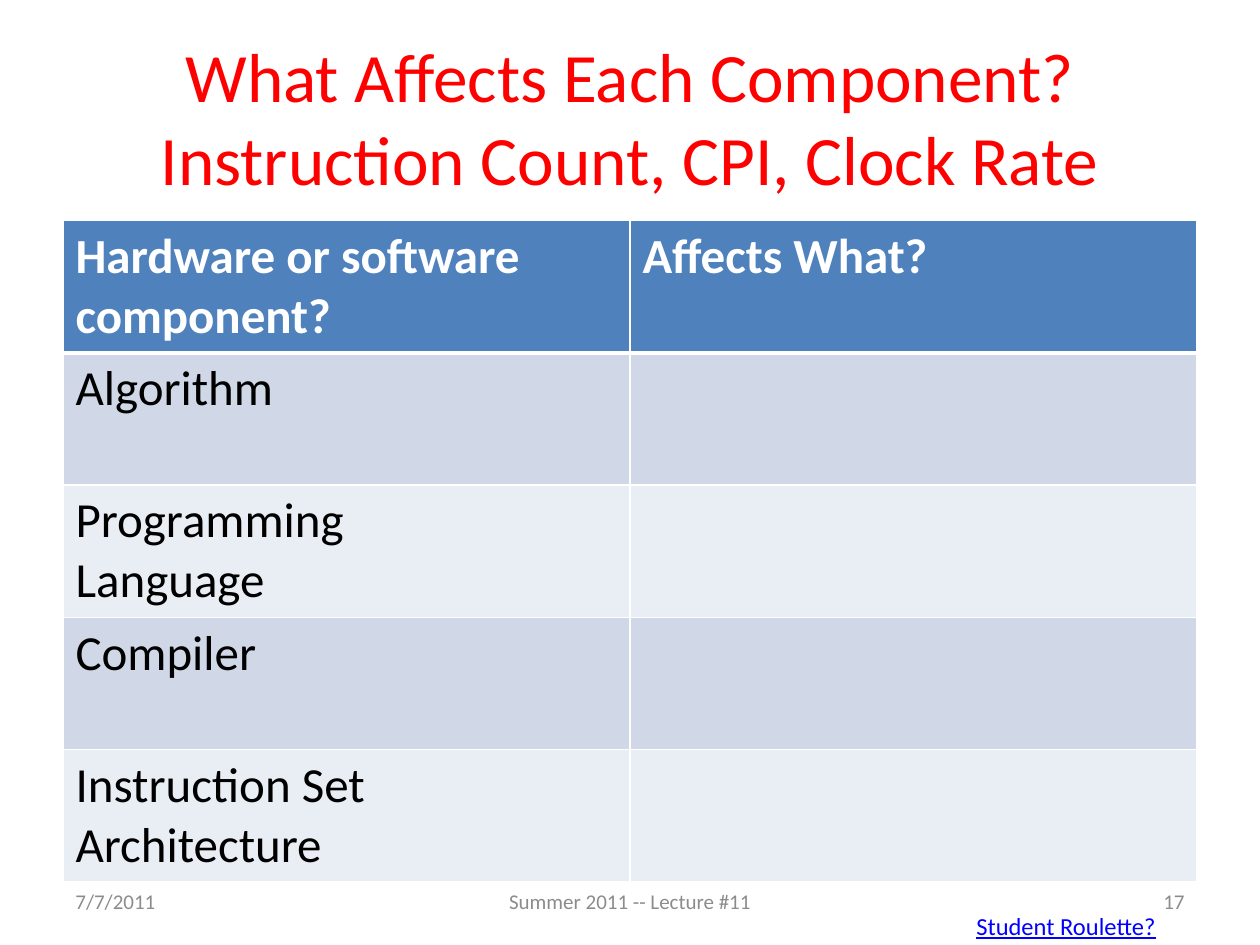
from dataclasses import dataclass

from lxml import etree
from pptx import Presentation
from pptx import util as u
from pptx.dml.color import RGBColor
from pptx.enum import text as t
from pptx.oxml import ns


@dataclass(frozen=True)
class Theme:
    font: str = "Calibri"
    title: str = "FF0000"
    header: str = "4F81BD"
    bands: tuple = ("D0D8E8", "E9EDF4")
    light: str = "FFFFFF"
    dark: str = "000000"
    footer: str = "8C8C8C"
    link: str = "0000FF"
    title_size: float = 39.6
    table_size: float = 28
    footer_size: float = 12
    link_size: float = 14


@dataclass(frozen=True)
class Label:
    words: str
    left: float
    top: float
    width: float
    height: float
    align: t.PP_ALIGN
    size: float
    color: str
    anchor: t.MSO_ANCHOR = t.MSO_ANCHOR.MIDDLE
    underline: bool = False
    wrap: bool = True


THEME = Theme()
LEFT, WIDTH = 36, 648
ROW_HEIGHT = 75.5
FOOTER_TOP, FOOTER_HEIGHT = 500.4, 28.8

# Each row: component, what it affects (left open for the class)
ROWS = [
    ("Hardware or software component?", "Affects What?"),
    ("Algorithm", ""),
    ("Programming \nLanguage", ""),
    ("Compiler", ""),
    ("Instruction Set Architecture", ""),
]

LABELS = [
    Label("7/7/2011", LEFT, FOOTER_TOP, 168, FOOTER_HEIGHT,
          t.PP_ALIGN.LEFT, THEME.footer_size, THEME.footer),
    Label("Summer 2011 -- Lecture #11", 246, FOOTER_TOP, 228, FOOTER_HEIGHT,
          t.PP_ALIGN.CENTER, THEME.footer_size, THEME.footer),
    Label("17", 516, FOOTER_TOP, 168, FOOTER_HEIGHT,
          t.PP_ALIGN.RIGHT, THEME.footer_size, THEME.footer),
    Label("Student Roulette?", 550.8, 517, 118, 24.2,
          t.PP_ALIGN.LEFT, THEME.link_size, THEME.link,
          t.MSO_ANCHOR.TOP, underline=True, wrap=False),
]


def add_runs(para, words: str, size: float, color: str,
             bold: bool = False, underline: bool = False) -> None:
    """Write words into a paragraph, one run for each line."""
    for index, line in enumerate(words.split("\n")):
        if index:
            para.add_line_break()
        span = para.add_run()
        span.text = line
        span.font.name = THEME.font
        span.font.size = u.Pt(size)
        span.font.bold = bold
        span.font.underline = underline
        span.font.color.rgb = RGBColor.from_string(color)


def add_borders(cell, bottom: float, top: float) -> None:
    properties = cell._tc.get_or_add_tcPr()
    for side, width in (("L", 1), ("R", 1), ("T", top), ("B", bottom)):
        line = etree.SubElement(properties, ns.qn(f"a:ln{side}"), w=str(u.Pt(width)))
        fill = etree.SubElement(line, ns.qn("a:solidFill"))
        etree.SubElement(fill, ns.qn("a:srgbClr"), val=THEME.light)


def add_title(page, words: str) -> None:
    title = page.shapes.title
    title.left, title.top = u.Pt(LEFT), u.Pt(21.6)
    title.width, title.height = u.Pt(WIDTH), u.Pt(90)
    frame = title.text_frame
    frame.word_wrap = True
    frame.auto_size = t.MSO_AUTO_SIZE.NONE
    frame.vertical_anchor = t.MSO_ANCHOR.MIDDLE
    para = frame.paragraphs[0]
    para.alignment = t.PP_ALIGN.CENTER
    add_runs(para, words, THEME.title_size, THEME.title)


def add_component_table(page) -> None:
    table = page.shapes.add_table(
        len(ROWS), 2, u.Pt(LEFT), u.Pt(126),
        u.Pt(WIDTH), u.Pt(ROW_HEIGHT * len(ROWS))).table
    for column in table.columns:
        column.width = u.Pt(WIDTH / 2)
    for row, texts in enumerate(ROWS):
        table.rows[row].height = u.Pt(ROW_HEIGHT)
        header = row == 0
        shade = THEME.header if header else THEME.bands[(row - 1) % 2]
        for column, words in enumerate(texts):
            cell = table.cell(row, column)
            add_borders(cell, bottom=3 if header else 1, top=3 if row == 1 else 1)
            cell.fill.solid()
            cell.fill.fore_color.rgb = RGBColor.from_string(shade)
            if words:
                add_runs(cell.text_frame.paragraphs[0], words, THEME.table_size,
                         THEME.light if header else THEME.dark, bold=header)


def add_label(page, label: Label) -> None:
    box = page.shapes.add_textbox(u.Pt(label.left), u.Pt(label.top),
                                  u.Pt(label.width), u.Pt(label.height))
    frame = box.text_frame
    frame.word_wrap = label.wrap
    frame.vertical_anchor = label.anchor
    para = frame.paragraphs[0]
    para.alignment = label.align
    add_runs(para, label.words, label.size, label.color, underline=label.underline)


def main() -> None:
    deck = Presentation()
    deck.slide_width, deck.slide_height = u.Pt(720), u.Pt(540)
    page = deck.slides.add_slide(deck.slide_layouts[5])

    # Title and table
    add_title(page, "What Affects Each Component? Instruction Count, CPI, Clock Rate")
    add_component_table(page)

    # Footer line and roulette prompt
    for label in LABELS:
        add_label(page, label)

    deck.save("out.pptx")


if __name__ == "__main__":
    main()
